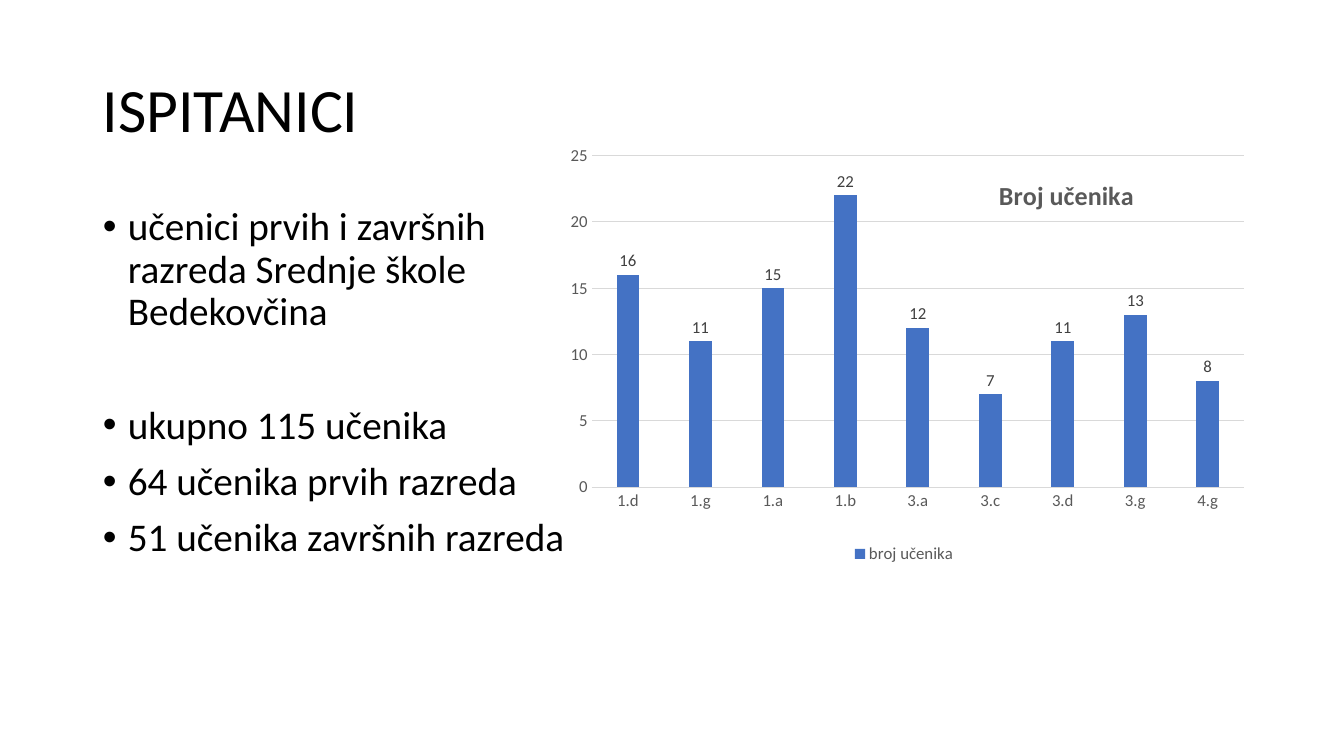
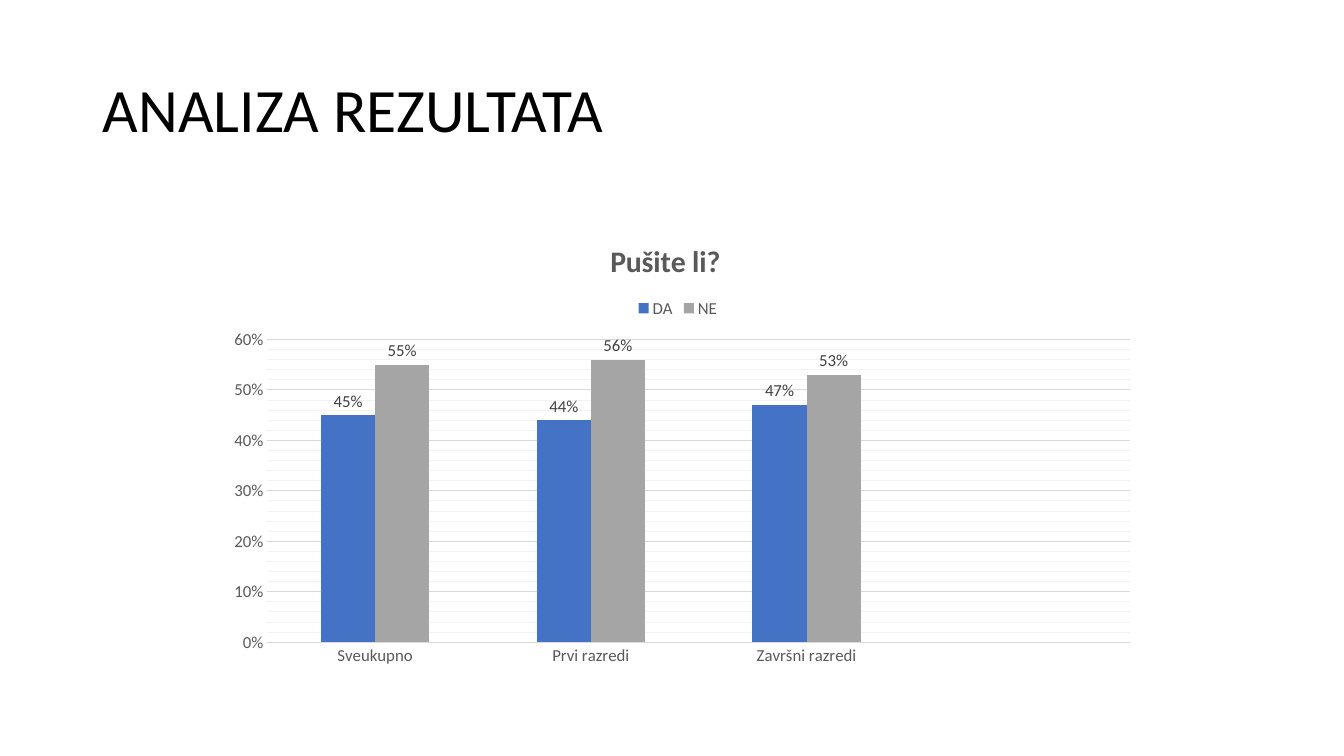
from copy import deepcopy

from lxml import etree
from pptx import Presentation
from pptx.chart.data import CategoryChartData
from pptx.dml.color import RGBColor
from pptx.enum.chart import XL_CHART_TYPE, XL_LABEL_POSITION, XL_LEGEND_POSITION, XL_TICK_MARK
from pptx.enum.text import MSO_ANCHOR
from pptx.oxml.ns import qn
from pptx.util import Emu, Pt

COLUMNS = XL_CHART_TYPE.COLUMN_CLUSTERED
OUTSIDE_END = XL_LABEL_POSITION.OUTSIDE_END
BOTTOM, TOP = XL_LEGEND_POSITION.BOTTOM, XL_LEGEND_POSITION.TOP
NO_TICK = XL_TICK_MARK.NONE
MIDDLE, UPPER = MSO_ANCHOR.MIDDLE, MSO_ANCHOR.TOP

EMU_PER_PX = 914400 / 100.8
FONT = "Calibri"
COLORS = {
    "text": "000000",
    "chart_text": "595959",
    "label": "404040",
    "grid": "D9D9D9",
    "minor_grid": "F2F2F2",
    "blue": "4472C4",
    "gray": "A5A5A5",
}
SLIDE_SIZE = (1344, 756)
TITLE_BOX = (93, 40, 1159, 146)
BODY_BOX = (93, 202, 487, 480)
BULLET_INDENT = 25

SLIDES = [
    {
        "title": "ISPITANICI",
        "bullets": [
            ("učenici prvih i završnih razreda Srednje škole Bedekovčina", 10),
            ("ukupno 115 učenika", 51),
            ("64 učenika prvih razreda", 10),
            ("51 učenika završnih razreda", 10),
        ],
        "chart": {
            "box": (557, 143, 694, 425),
            "title": "Broj učenika",
            "title_size": 18.6,
            "categories": ["1.d", "1.g", "1.a", "1.b", "3.a", "3.c", "3.d", "3.g", "4.g"],
            "series": [("broj učenika", "blue", [16, 11, 15, 22, 12, 7, 11, 13, 8])],
            "format": "General",
            "maximum": 25,
            "major": 5,
            "minor": None,
            "gap": 219,
            "overlap": -27,
            "legend": BOTTOM,
            "layouts": {"c:title": (0.63, 0.07), "c:plotArea": (0.05, 0.03, 0.94, 0.78)},
        },
    },
    {
        "title": "ANALIZA REZULTATA",
        "bullets": [],
        "chart": {
            "box": (211, 222, 938, 452),
            "title": "Pušite li?",
            "title_size": 21.3,
            "categories": ["Sveukupno", "Prvi razredi", "Završni razredi", ""],
            "series": [
                ("DA", "blue", [0.45, 0.44, 0.47, None]),
                ("NE", "gray", [0.55, 0.56, 0.53, None]),
            ],
            "format": "0%",
            "maximum": 0.6,
            "major": 0.1,
            "minor": 0.02,
            "gap": 199,
            "overlap": 0,
            "legend": TOP,
            "layouts": {
                "c:title": (0.42, 0.03),
                "c:legend": (0.45, 0.16),
                "c:plotArea": (0.06, 0.26, 0.92, 0.67),
            },
        },
    },
]


def px(value):
    return Emu(round(value * EMU_PER_PX))


def color(name):
    return RGBColor.from_string(COLORS[name])


def style_font(font, size, color_name, bold=False):
    font.name = FONT
    font.size = Pt(size)
    font.bold = bold
    font.color.rgb = color(color_name)


def style_line(line, color_name):
    line.color.rgb = color(color_name)
    line.width = Pt(0.75)


def add_bullet(paragraph):
    properties = paragraph._p.get_or_add_pPr()
    properties.set("marL", str(px(BULLET_INDENT)))
    properties.set("indent", str(-px(BULLET_INDENT)))
    bullet_font = etree.Element(qn("a:buFont"), typeface="Arial")
    bullet = etree.Element(qn("a:buChar"), char="•")
    properties.find(qn("a:spcBef")).addnext(bullet_font)
    bullet_font.addnext(bullet)


def add_text(slide, box, items, size, anchor, bulleted=False):
    frame = slide.shapes.add_textbox(*map(px, box)).text_frame
    frame.word_wrap = True
    frame.vertical_anchor = anchor
    for index, (text, space_before) in enumerate(items):
        paragraph = frame.add_paragraph() if index else frame.paragraphs[0]
        paragraph.text = text
        paragraph.line_spacing = 0.9
        paragraph.space_before = Pt(space_before)
        style_font(paragraph.font, size, "text")
        if bulleted:
            add_bullet(paragraph)


def place_chart_part(chart, tag, position):
    part = chart.element.find(".//" + qn(tag))
    for old_layout in part.findall(qn("c:layout")):
        part.remove(old_layout)
    layout = etree.Element(qn("c:layout"))
    manual = etree.SubElement(layout, qn("c:manualLayout"))
    if tag == "c:plotArea":
        etree.SubElement(manual, qn("c:layoutTarget"), val="inner")
    for name in ("xMode", "yMode"):
        etree.SubElement(manual, qn("c:" + name), val="edge")
    for name, value in zip("xywh", position):
        etree.SubElement(manual, qn("c:" + name), val=str(value))
    part.insert(0 if tag == "c:plotArea" else 1, layout)


def add_minor_gridlines(chart, unit):
    chart.value_axis.minor_unit = unit
    chart.value_axis.has_minor_gridlines = True
    major = chart.element.find(".//" + qn("c:majorGridlines"))
    minor = chart.element.find(".//" + qn("c:minorGridlines"))
    properties = deepcopy(major.find(qn("c:spPr")))
    properties.find(".//" + qn("a:srgbClr")).set("val", COLORS["minor_grid"])
    minor.append(properties)


def style_axes(chart, content):
    for axis in (chart.category_axis, chart.value_axis):
        axis.major_tick_mark = axis.minor_tick_mark = NO_TICK
        style_font(axis.tick_labels.font, 12, "chart_text")
    style_line(chart.category_axis.format.line, "grid")
    axis = chart.value_axis
    axis.format.line.fill.background()
    axis.minimum_scale = 0
    axis.maximum_scale = content["maximum"]
    axis.major_unit = content["major"]
    axis.tick_labels.number_format = content["format"]
    axis.tick_labels.number_format_is_linked = False
    style_line(axis.major_gridlines.format.line, "grid")
    if content["minor"]:
        add_minor_gridlines(chart, content["minor"])


def style_series(series, color_name, number_format):
    series.format.fill.solid()
    series.format.fill.fore_color.rgb = color(color_name)
    series.invert_if_negative = False
    labels = series.data_labels
    labels.show_value = True
    labels.position = OUTSIDE_END
    labels.number_format = number_format
    labels.number_format_is_linked = False
    style_font(labels.font, 12, "label")


def add_column_chart(slide, content):
    data = CategoryChartData(number_format=content["format"])
    data.categories = content["categories"]
    for name, _, values in content["series"]:
        data.add_series(name, values)
    chart = slide.shapes.add_chart(COLUMNS, *map(px, content["box"]), data).chart
    style_font(chart.font, 10, "text")

    chart.has_title = True
    paragraph = chart.chart_title.text_frame.paragraphs[0]
    paragraph.text = content["title"]
    style_font(paragraph.font, content["title_size"], "chart_text", bold=True)

    chart.has_legend = True
    chart.legend.position = content["legend"]
    chart.legend.include_in_layout = False
    style_font(chart.legend.font, 12, "chart_text")

    style_axes(chart, content)
    plot = chart.plots[0]
    plot.vary_by_categories = False
    plot.gap_width = content["gap"]
    plot.overlap = content["overlap"]
    for series, (_, color_name, _) in zip(plot.series, content["series"]):
        style_series(series, color_name, content["format"])
    for tag, position in content["layouts"].items():
        place_chart_part(chart, tag, position)


def main():
    presentation = Presentation()
    presentation.slide_width, presentation.slide_height = map(px, SLIDE_SIZE)
    for content in SLIDES:
        slide = presentation.slides.add_slide(presentation.slide_layouts[6])
        add_text(slide, TITLE_BOX, [(content["title"], 0)], 44, MIDDLE)
        if content["bullets"]:
            add_text(slide, BODY_BOX, content["bullets"], 28, UPPER, bulleted=True)
        add_column_chart(slide, content["chart"])
    presentation.save("out.pptx")


if __name__ == "__main__":
    main()
